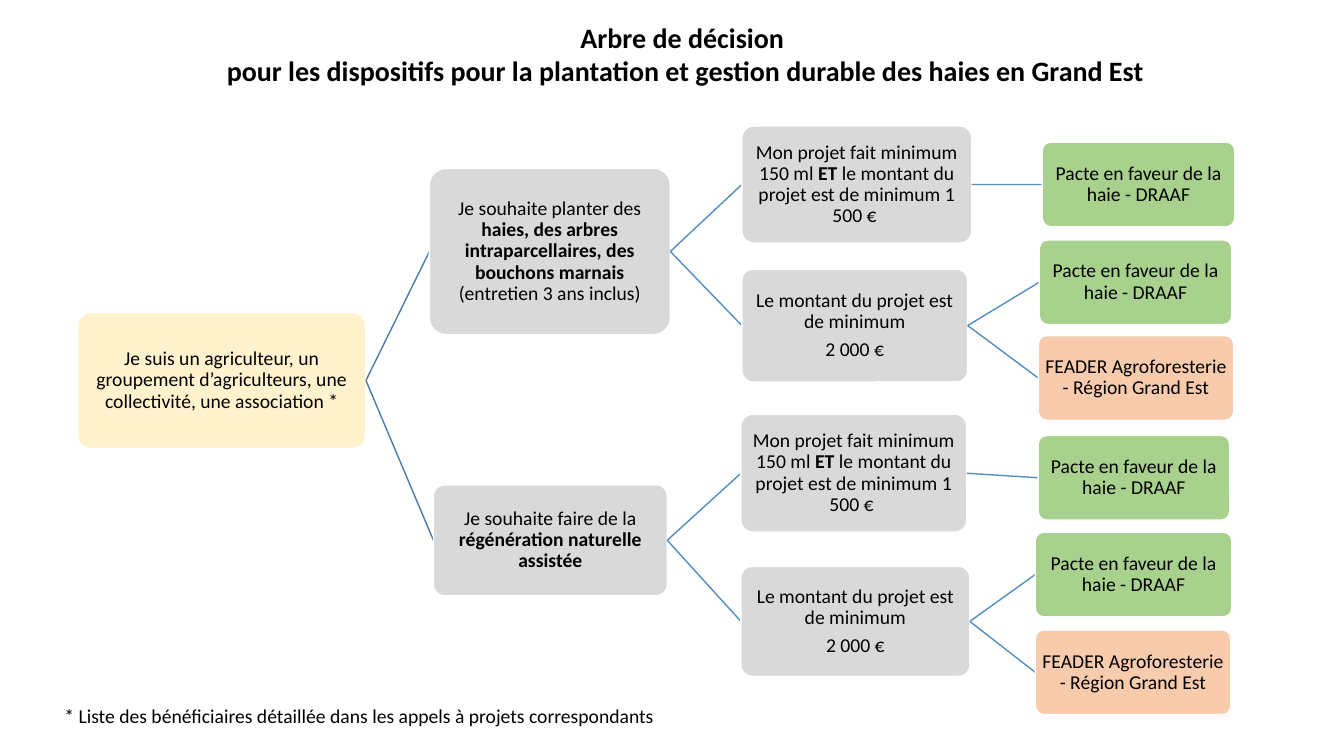
"""Build the decision-tree slide for hedge planting and management schemes."""
import dataclasses
import typing

import lxml.etree
import pptx
import pptx.dml.color
import pptx.enum.shapes
import pptx.enum.text
import pptx.oxml.ns
import pptx.util

RGB = pptx.dml.color.RGBColor.from_string
ALIGN = pptx.enum.text.PP_ALIGN
ANCHOR = pptx.enum.text.MSO_ANCHOR
SHAPE = pptx.enum.shapes.MSO_SHAPE.ROUNDED_RECTANGLE


@dataclasses.dataclass(frozen=True)
class Theme:
    """Colours, font and type sizes."""
    font: str = "Calibri"
    title: float = 20
    body: float = 14
    text: str = "000000"
    border: str = "FFFFFF"
    applicant: str = "FFF2CC"
    condition: str = "D9D9D9"
    pact: str = "A9D18E"
    feader: str = "F8CBAD"
    main_link: str = "497CAB"
    sub_link: str = "538DC1"


class Box(typing.NamedTuple):
    """Left, top, width and height as percentages of the slide."""
    x: float
    y: float
    w: float
    h: float


@dataclasses.dataclass(frozen=True)
class Node:
    """A tree box; bars in its text switch bold on and off."""
    box: Box
    fill: str
    text: tuple[str, ...]
    link: str = ""
    children: tuple["Node", ...] = ()


T = Theme()
W, H = pptx.util.Inches(13.333), pptx.util.Inches(7.5)
INSET = pptx.util.Inches(0.01)
LEAF_H = 11.2
TITLE = ("Arbre de décision ",
         "pour les dispositifs pour la plantation et gestion durable des haies en Grand Est")
FOOTNOTE = ("* Liste des bénéficiaires détaillée dans les appels à projets correspondants",)
NODE_FRAME = dict(word_wrap=True, vertical_anchor=ANCHOR.MIDDLE, margin_left=INSET,
                  margin_right=INSET, margin_top=INSET, margin_bottom=INSET)
NODE_PARA = dict(alignment=ALIGN.CENTER, line_spacing=0.9, space_after=pptx.util.Pt(5))


def pact(x: float, y: float, w: float) -> Node:
    """Return a leaf for the hedge pact."""
    return Node(Box(x, y, w, LEAF_H), T.pact, ("Pacte en faveur de la haie - DRAAF",))


def feader(x: float, y: float) -> Node:
    """Return a leaf for the agroforestry fund."""
    return Node(Box(x, y, 14.55, LEAF_H), T.feader, ("FEADER Agroforesterie - Région Grand Est",))


def length(box: Box, *leaves: Node) -> Node:
    """Return the condition on hedge length and project amount."""
    text = "Mon projet fait minimum 150 ml |ET| le montant du projet est de minimum 1 500 € "
    return Node(box, T.condition, (text,), T.sub_link, leaves)


def amount(box: Box, *leaves: Node) -> Node:
    """Return the condition on project amount alone."""
    text = ("Le montant du projet est de minimum", "2 000 €")
    return Node(box, T.condition, text, T.sub_link, leaves)


PLANTING = Node(
    Box(31.95, 22.27, 17.93, 22), T.condition,
    ("Je souhaite planter des |haies, des arbres intraparcellaires, des bouchons marnais "
     "|(entretien 3 ans inclus)",), T.sub_link,
    (length(Box(55.2, 16.67, 17.1, 15.47), pact(77.55, 18.8, 14.33)),
     amount(Box(55.2, 35.6, 16.8, 14.93), pact(77.33, 31.73, 14.33), feader(77.25, 44.4))))
REGENERATION = Node(
    Box(32.25, 64.13, 17.4, 14.67), T.condition,
    ("Je souhaite faire de la |régénération naturelle assistée",), T.sub_link,
    (length(Box(55.13, 54.8, 16.8, 15.6), pact(77.25, 57.6, 14.25)),
     amount(Box(55.13, 74.93, 17.03, 14.53), pact(77.03, 70.4, 14.63), feader(77.03, 83.33))))
APPLICANT = Node(
    Box(5.78, 41.33, 21.45, 18), T.applicant,
    ("Je suis un agriculteur, un groupement d’agriculteurs, une collectivité, une association *",),
    T.main_link, (PLANTING, REGENERATION))


def emu(x: float, y: float) -> tuple[int, int]:
    """Convert slide percentages to lengths."""
    return round(W * x / 100), round(H * y / 100)


def apply(target: typing.Any, formats: dict[str, typing.Any]) -> None:
    """Set each format value on the target."""
    for name, value in formats.items():
        setattr(target, name, value)


def write(tf: typing.Any, text: tuple[str, ...], size: float, para: dict[str, typing.Any],
          bold: bool = False) -> None:
    """Fill a text frame with paragraphs of plain and bold runs."""
    for i, line in enumerate(text):
        p = tf.add_paragraph() if i else tf.paragraphs[0]
        apply(p, para)
        for j, part in enumerate(line.split("|")):
            r = p.add_run()
            r.text = part
            apply(r.font, dict(name=T.font, size=pptx.util.Pt(size), bold=bold or j % 2 == 1))
            r.font.color.rgb = RGB(T.text)


def draw_link(s: typing.Any, parent: Node, child: Node) -> None:
    """Join the right side of a parent to the left side of its child."""
    a, b = parent.box, child.box
    cx = s.shapes.add_connector(pptx.enum.shapes.MSO_CONNECTOR.STRAIGHT,
                                *emu(a.x + a.w, a.y + a.h / 2), *emu(b.x, b.y + b.h / 2))
    cx.line.color.rgb = RGB(parent.link)
    cx.line.width = pptx.util.Pt(1)
    lxml.etree.SubElement(cx._element.spPr, pptx.oxml.ns.qn("a:effectLst"))


def draw_node(s: typing.Any, node: Node) -> None:
    """Draw a box, then the links and boxes below it."""
    b = node.box
    sp = s.shapes.add_shape(SHAPE, *emu(b.x, b.y), *emu(b.w, b.h))
    sp.adjustments[0] = 0.1
    sp.shadow.inherit = False
    sp.fill.solid()
    sp.fill.fore_color.rgb = RGB(node.fill)
    sp.line.color.rgb = RGB(T.border)
    sp.line.width = pptx.util.Pt(1)
    apply(sp.text_frame, NODE_FRAME)
    write(sp.text_frame, node.text, T.body, NODE_PARA)
    for child in node.children:
        draw_link(s, node, child)
        draw_node(s, child)


def draw_text(s: typing.Any, box: Box, text: tuple[str, ...], size: float,
              align: ALIGN, bold: bool = False) -> None:
    """Draw a free text box that grows with its text."""
    tf = s.shapes.add_textbox(*emu(box.x, box.y), *emu(box.w, box.h)).text_frame
    apply(tf, dict(word_wrap=True, auto_size=pptx.enum.text.MSO_AUTO_SIZE.SHAPE_TO_FIT_TEXT))
    write(tf, text, size, dict(alignment=align), bold)


def main() -> None:
    """Build and save the slide."""
    prs = pptx.Presentation()
    apply(prs, dict(slide_width=W, slide_height=H))
    s = prs.slides.add_slide(prs.slide_layouts[6])
    draw_node(s, APPLICANT)
    draw_text(s, Box(4.05, 92.4, 65.93, 4.53), FOOTNOTE, T.body, ALIGN.LEFT)
    draw_text(s, Box(2.03, 2, 97.95, 10.27), TITLE, T.title, ALIGN.CENTER, True)
    prs.save("out.pptx")


if __name__ == "__main__":
    main()
